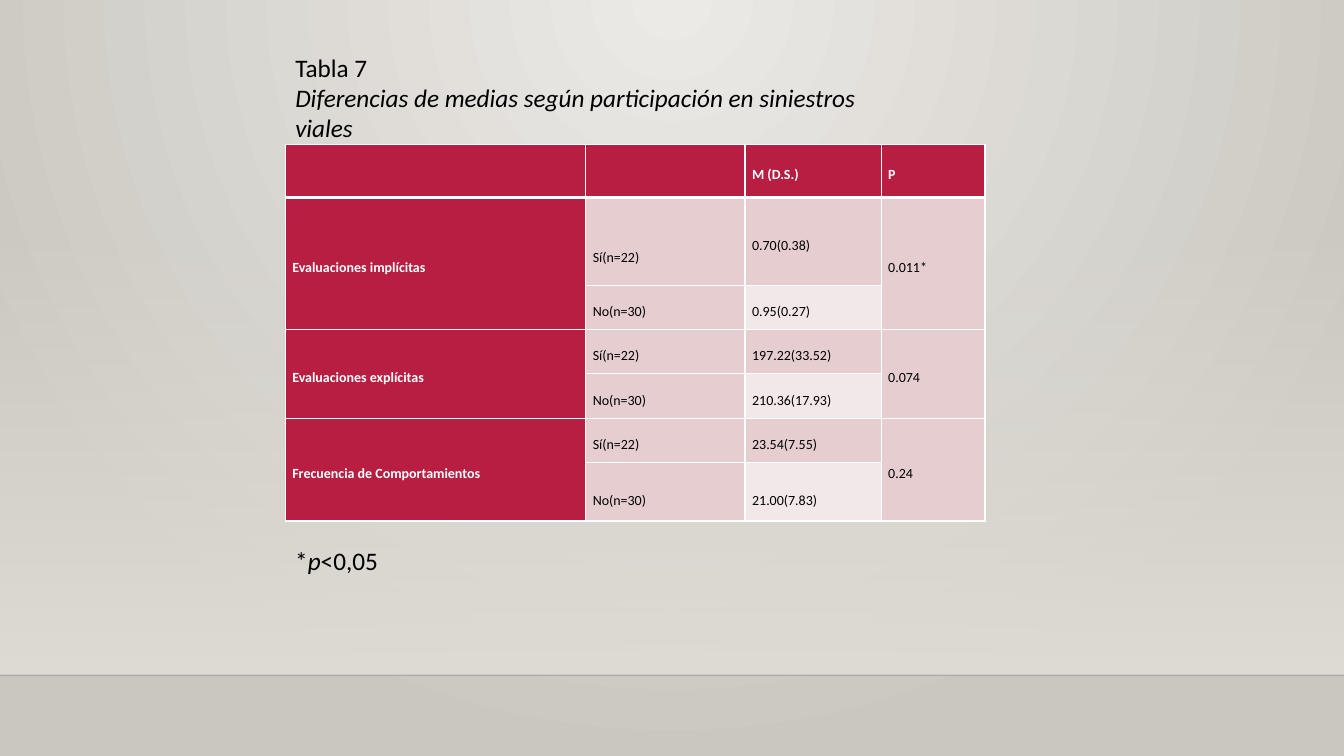
from lxml import etree
from pptx import Presentation
from pptx.dml.color import RGBColor
from pptx.enum.shapes import MSO_CONNECTOR as CONN, MSO_SHAPE as SHAPE
from pptx.enum.text import MSO_ANCHOR as ANCHOR, PP_ALIGN as ALIGN
from pptx.oxml import parse_xml
from pptx.oxml.ns import nsdecls, qn
from pptx.util import Inches, Pt

WHITE = RGBColor(0xFF, 0xFF, 0xFF)
BLACK = RGBColor(0, 0, 0)
RULE = RGBColor(0, 0, 1)
CRIMSON = RGBColor(0xB7, 0x1E, 0x42)
ROSE = RGBColor(0xE6, 0xCD, 0xCF)
PALE_ROSE = RGBColor(0xF3, 0xE8, 0xE9)
LIGHT = RGBColor(0xEC, 0xEA, 0xE7)
STONE = RGBColor(0xCA, 0xC7, 0xC1)
SAND = RGBColor(0xDF, 0xDB, 0xD5)
FONT = "Calibri"

COLS = [2.98, 1.58, 1.35, 1.03]
ROWS = [0.53, 0.87, 0.44, 0.44, 0.44, 0.44, 0.58]
HEADER = ["", "", "M (D.S.)", "P"]
GROUPS = [
    ("Evaluaciones implícitas", "0.70(0.38)", "0.95(0.27)", "0.011*"),
    ("Evaluaciones explícitas", "197.22(33.52)", "210.36(17.93)", "0.074"),
    ("Frecuencia de Comportamientos", "23.54(7.55)", "21.00(7.83)", "0.24"),
]


def gradient(start, end, direction, start_alpha=100):
    return parse_xml(
        f'<a:gradFill {nsdecls("a")} rotWithShape="1"><a:gsLst>'
        f'<a:gs pos="0"><a:srgbClr val="{start}"><a:alpha val="{start_alpha * 1000}"/></a:srgbClr></a:gs>'
        f'<a:gs pos="100000"><a:srgbClr val="{end}"/></a:gs>'
        f'</a:gsLst>{direction}</a:gradFill>')


def add_backdrop(s, width):
    s.background.fill.solid()
    bg_pr = s.background._cSld.bg.bgPr
    glow = ('<a:path path="circle"><a:fillToRect l="43000" t="0" r="43000" b="100000"/></a:path>')
    bg_pr.replace(bg_pr[0], gradient(LIGHT, STONE, glow))

    haze = s.shapes.add_shape(SHAPE.RECTANGLE, 0, Inches(2.21), width, Inches(4.49))
    haze.shadow.inherit = False
    haze.line.fill.background()
    haze.fill.solid()
    sp_pr = haze._element.spPr
    sp_pr.replace(sp_pr.find(qn("a:solidFill")),
                  gradient(SAND, SAND, '<a:lin ang="5400000" scaled="0"/>', 0))

    floor = s.shapes.add_connector(CONN.STRAIGHT, 0, Inches(6.7), width, Inches(6.7))
    floor.line.color.rgb = RULE
    floor.line.width = Pt(1)
    color = next(floor._element.spPr.iter(qn("a:srgbClr")))
    etree.SubElement(color, qn("a:alpha")).set("val", "20000")
    etree.SubElement(floor._element.spPr, qn("a:effectLst"))


def add_run(p, text, size, color=BLACK, bold=False, italic=False):
    r = p.add_run()
    r.text = text
    r.font.name = FONT
    r.font.size = Pt(size)
    r.font.color.rgb = color
    r.font.bold = bold
    r.font.italic = italic


def add_text(s, x, y, w, h, paragraphs, anchor=ANCHOR.TOP):
    tf = s.shapes.add_textbox(Inches(x), Inches(y), Inches(w), Inches(h)).text_frame
    tf.word_wrap = True
    tf.vertical_anchor = anchor
    for i, runs in enumerate(paragraphs):
        p = tf.add_paragraph() if i else tf.paragraphs[0]
        for text, italic in runs:
            add_run(p, text, 18, italic=italic)


def style_cell(cell, row, col):
    tc_pr = cell._tc.get_or_add_tcPr()
    for side in "LRTB":
        thick = (row, side) in ((0, "B"), (1, "T"))
        tc_pr.append(parse_xml(
            f'<a:ln{side} {nsdecls("a")} w="{Pt(3 if thick else 1)}"><a:solidFill>'
            f'<a:srgbClr val="{WHITE}"/></a:solidFill></a:ln{side}>'))
    cell.fill.solid()
    if row == 0 or col == 0:
        cell.fill.fore_color.rgb = CRIMSON
    else:
        cell.fill.fore_color.rgb = PALE_ROSE if col == 2 and row % 2 == 0 else ROSE
    cell.vertical_anchor = ANCHOR.MIDDLE
    cell.margin_left = cell.margin_right = Inches(0.07)
    cell.margin_top = cell.margin_bottom = 0


def fill_cell(cell, text, row, col):
    style_cell(cell, row, col)
    if not text:
        return
    heading = row == 0 or col == 0
    p = cell.text_frame.paragraphs[0]
    p.alignment = ALIGN.JUSTIFY if col in (1, 2) else ALIGN.LEFT
    p.line_spacing = 2.0 if row == len(ROWS) - 1 else 1.5
    add_run(p, text, 10, WHITE if heading else BLACK, bold=heading)


def add_means_table(s, x, y):
    table = s.shapes.add_table(len(ROWS), len(COLS), Inches(x), Inches(y),
                               Inches(sum(COLS)), Inches(sum(ROWS))).table
    for column, w in zip(table.columns, COLS):
        column.width = Inches(w)
    for line, h in zip(table.rows, ROWS):
        line.height = Inches(h)

    content = [HEADER]
    for label, yes, no, p_value in GROUPS:
        content += [[label, "Sí(n=22)", yes, p_value], ["", "No(n=30)", no, ""]]
    for row, texts in enumerate(content):
        for col, text in enumerate(texts):
            fill_cell(table.cell(row, col), text, row, col)
    table.cell(1, 1).margin_top = Inches(0.25)
    for row in range(1, len(ROWS), 2):
        for col in (0, 3):
            table.cell(row, col).merge(table.cell(row + 1, col))


def main():
    prs = Presentation()
    prs.slide_width, prs.slide_height = Inches(13.33), Inches(7.5)
    s = prs.slides.add_slide(prs.slide_layouts[6])
    add_backdrop(s, prs.slide_width)
    add_means_table(s, 2.83, 1.43)
    add_text(s, 2.83, 0.61, 5.99, 0.71, [
        [("Tabla 7", False)],
        [("Diferencias de medias según participación en siniestros viales", True)],
    ], ANCHOR.MIDDLE)
    add_text(s, 2.83, 5.36, 1.04, 0.4, [[("*", False), ("p", True), ("<0,05", False)]])
    prs.save("out.pptx")


if __name__ == "__main__":
    main()
